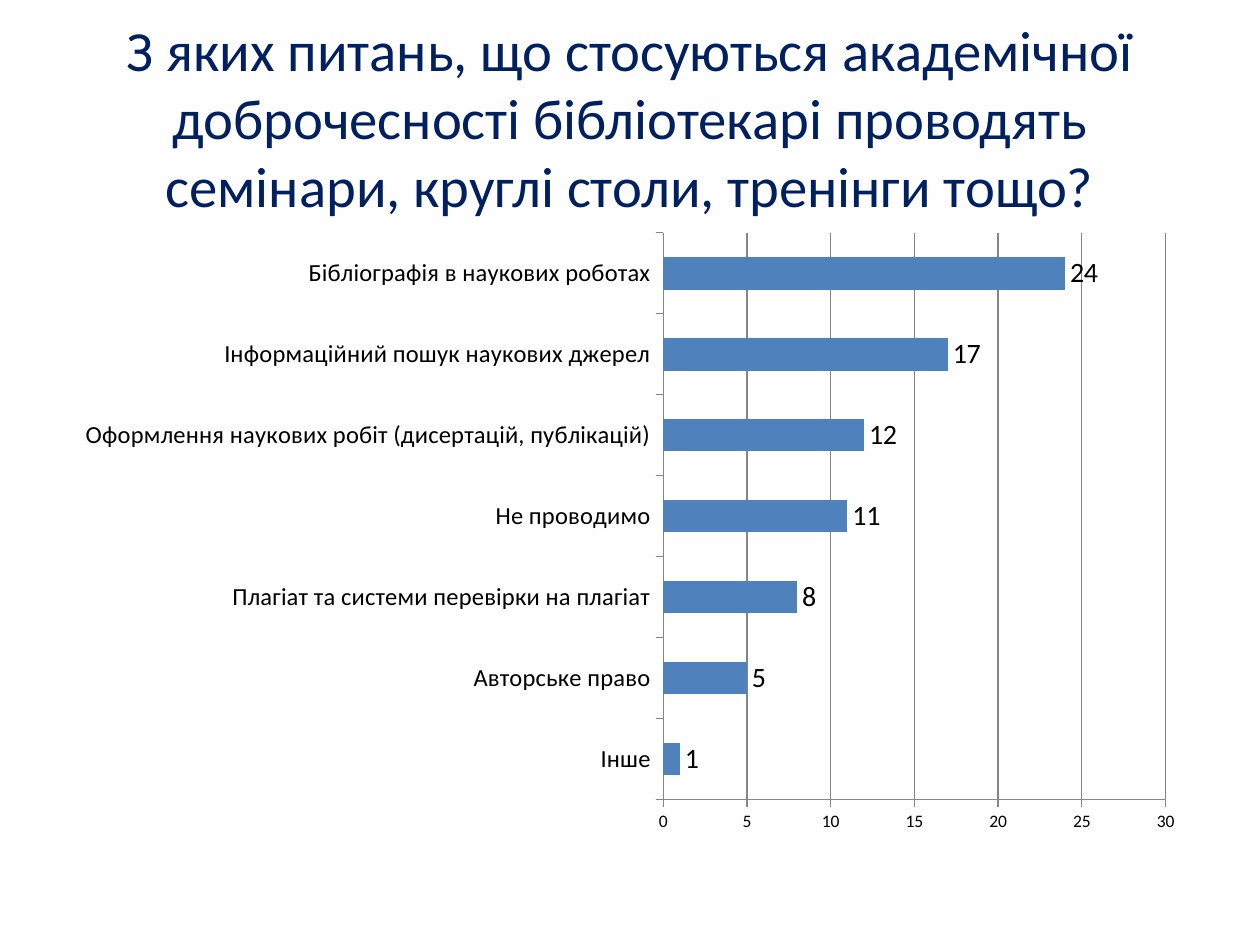
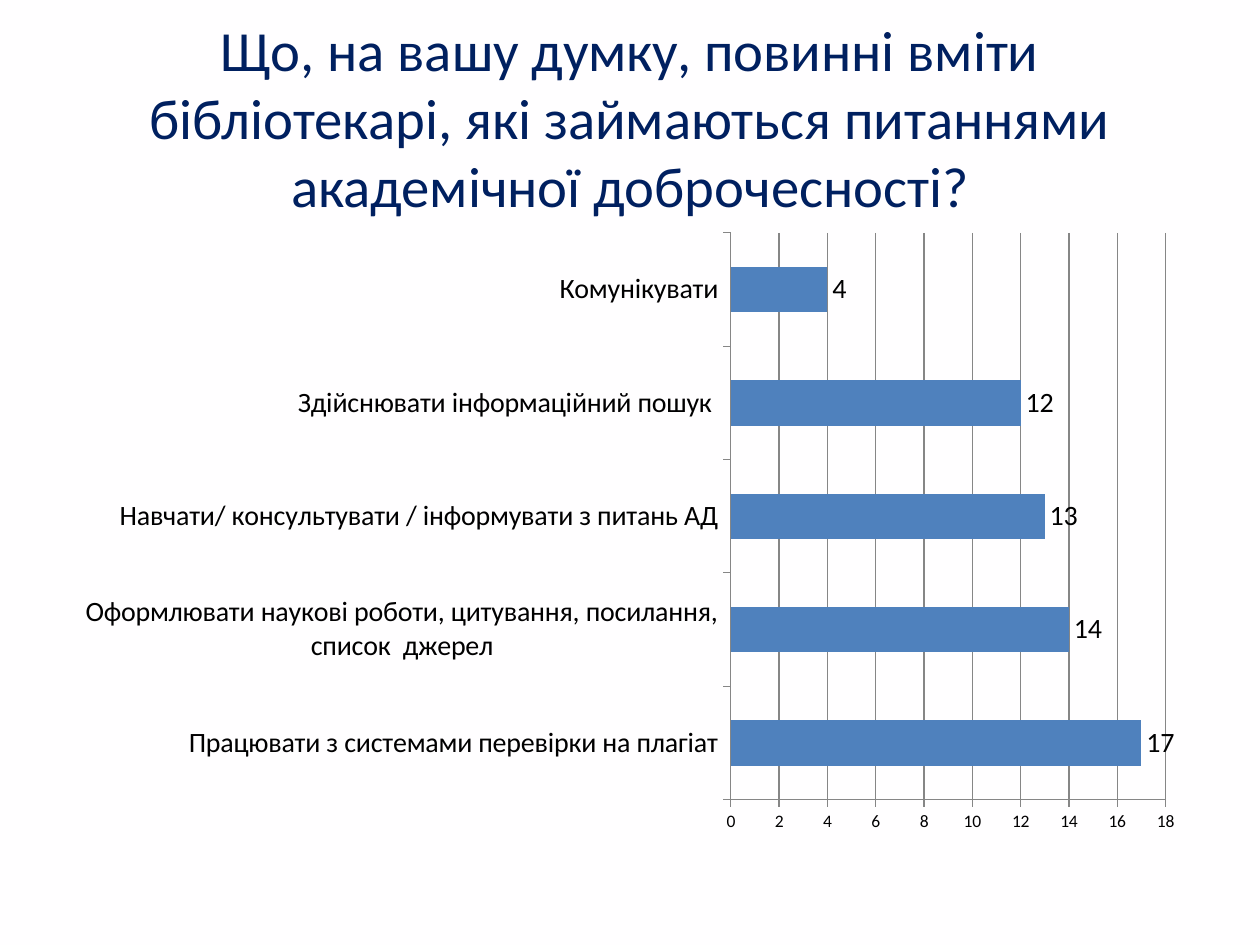
from pptx import Presentation
from pptx.chart.data import CategoryChartData
from pptx.dml.color import RGBColor
from pptx.enum.chart import XL_CHART_TYPE, XL_LABEL_POSITION, XL_TICK_MARK
from pptx.enum.text import MSO_ANCHOR, PP_ALIGN
from pptx.util import Pt

BAR_CLUSTERED = XL_CHART_TYPE.BAR_CLUSTERED
OUTSIDE_END = XL_LABEL_POSITION.OUTSIDE_END
TICK_OUTSIDE = XL_TICK_MARK.OUTSIDE
TICK_NONE = XL_TICK_MARK.NONE
MIDDLE = MSO_ANCHOR.MIDDLE
CENTER = PP_ALIGN.CENTER

COLORS = {
    "background": "FFFEFF",
    "title": "002060",
    "text": "000000",
    "bar": "4F81BD",
    "axis": "868686",
}
FONT = "Calibri"
LEFT, WIDTH = 36, 648

# Survey questions: answers run from the bottom bar to the top one
QUESTIONS = [
    {
        "title": "З яких питань, що стосуються академічної доброчесності "
                 "бібліотекарі проводять семінари, круглі столи, тренінги тощо?",
        "answers": {
            "Інше": 1,
            "Авторське право": 5,
            "Плагіат та системи перевірки на плагіат": 8,
            "Не проводимо": 11,
            "Оформлення наукових робіт (дисертацій, публікацій)": 12,
            "Інформаційний пошук наукових джерел": 17,
            "Бібліографія в наукових роботах": 24,
        },
        "answer_size": 14, "maximum": 30, "step": 5,
    },
    {
        "title": "Що, на вашу думку, повинні вміти бібліотекарі, "
                 "які займаються питаннями академічної доброчесності?",
        "answers": {
            "Працювати з системами перевірки на плагіат": 17,
            "Оформлювати наукові роботи, цитування, посилання, список  джерел": 14,
            "Навчати/ консультувати / інформувати з питань АД": 13,
            "Здійснювати інформаційний пошук ": 12,
            "Комунікувати": 4,
        },
        "answer_size": 16, "maximum": 18, "step": 2,
    },
]


def color(name):
    return RGBColor.from_string(COLORS[name])


def add_text(slide, text, *, left, top, width, height, size, fill):
    box = slide.shapes.add_textbox(Pt(left), Pt(top), Pt(width), Pt(height))
    frame = box.text_frame
    frame.word_wrap = True
    frame.vertical_anchor = MIDDLE
    para = frame.paragraphs[0]
    para.alignment = CENTER
    span = para.add_run()
    span.text = text
    span.font.name = FONT
    span.font.size = Pt(size)
    span.font.color.rgb = color(fill)


deck = Presentation()
deck.slide_width, deck.slide_height = Pt(720), Pt(540)

for question in QUESTIONS:
    page = deck.slides.add_slide(deck.slide_layouts[6])
    page.background.fill.solid()
    page.background.fill.fore_color.rgb = color("background")

    # Title
    add_text(page, question["title"], left=LEFT, top=21.6, width=WIDTH,
             height=90, size=32.4, fill="title")

    # Bar chart
    answers = question["answers"]
    data = CategoryChartData()
    data.categories = list(answers)
    data.add_series("Series 1", list(answers.values()))
    chart = page.shapes.add_chart(BAR_CLUSTERED, Pt(LEFT), Pt(126),
                                  Pt(WIDTH), Pt(356.4), data).chart
    chart.has_legend = False
    chart.has_title = False
    chart.font.name = FONT
    chart.font.size = Pt(10)
    chart.font.color.rgb = color("text")

    # Bars and their values
    plot = chart.plots[0]
    plot.gap_width = 150
    plot.vary_by_categories = False
    bars = plot.series[0].format.fill
    bars.solid()
    bars.fore_color.rgb = color("bar")
    plot.has_data_labels = True
    labels = plot.data_labels
    labels.show_value = True
    labels.position = OUTSIDE_END
    labels.font.name = FONT
    labels.font.size = Pt(16)
    labels.font.color.rgb = color("text")

    # Axes and grid
    answer_axis, count_axis = chart.category_axis, chart.value_axis
    answer_axis.tick_labels.font.size = Pt(question["answer_size"])
    count_axis.minimum_scale = 0
    count_axis.maximum_scale = question["maximum"]
    count_axis.major_unit = question["step"]
    count_axis.has_major_gridlines = True
    for axis in (answer_axis, count_axis):
        axis.major_tick_mark = TICK_OUTSIDE
        axis.minor_tick_mark = TICK_NONE
    for ruled in (answer_axis, count_axis, count_axis.major_gridlines):
        ruled.format.line.color.rgb = color("axis")
        ruled.format.line.width = Pt(0.75)

deck.save("out.pptx")
